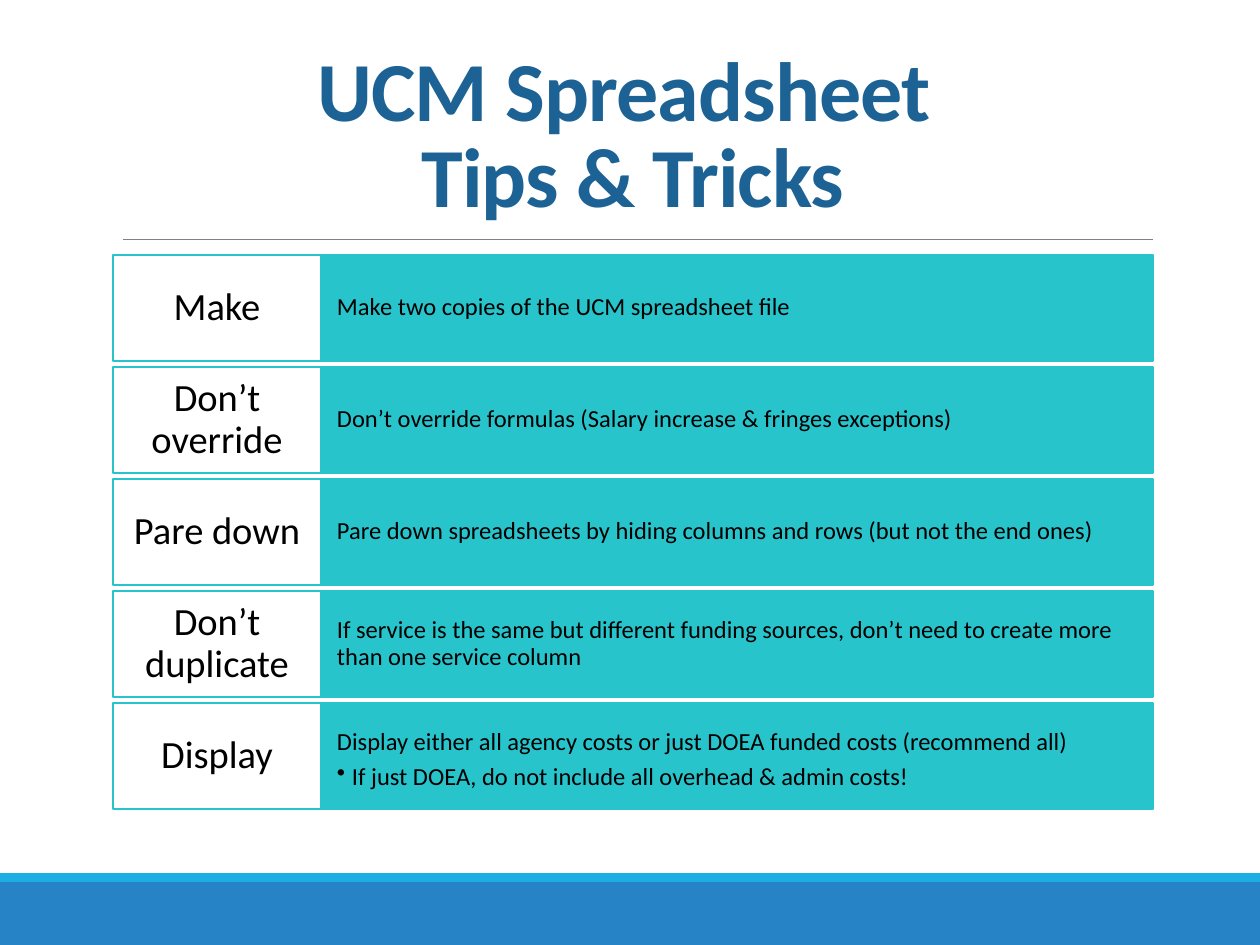
from lxml import etree
from pptx import Presentation
from pptx.dml.color import RGBColor
from pptx.enum.shapes import MSO_CONNECTOR, MSO_SHAPE
from pptx.enum.text import MSO_ANCHOR, MSO_AUTO_SIZE, PP_ALIGN
from pptx.oxml.ns import qn
from pptx.util import Pt

RECT = MSO_SHAPE.RECTANGLE
STRAIGHT = MSO_CONNECTOR.STRAIGHT
TOP, MIDDLE = MSO_ANCHOR.TOP, MSO_ANCHOR.MIDDLE
LEFT, CENTER = PP_ALIGN.LEFT, PP_ALIGN.CENTER
PX = 914400 / 126
COLORS = {
    "footer": "2683C6", "stripe": "1CADE4", "rule": "808080",
    "title": "1D6294", "teal": "28C4CC", "white": "FFFFFF", "text": "000000",
}
ROWS = [
    ("Make", ["Make two copies of the UCM spreadsheet file"]),
    ("Don’t override", ["Don’t override formulas (Salary increase & fringes exceptions)"]),
    ("Pare down", ["Pare down spreadsheets by hiding columns and rows (but not the end ones)"]),
    ("Don’t duplicate", ["If service is the same but different funding sources, "
                         "don’t need to create more than one service column"]),
    ("Display", ["Display either all agency costs or just DOEA funded costs (recommend all)",
                 "If just DOEA, do not include all overhead & admin costs!"]),
]
ROW_TOP, ROW_PITCH, ROW_HEIGHT = 255, 112, 106
LABEL = {"x": 113, "w": 208, "fill": "white", "size": 22, "align": CENTER,
         "after": 8, "inset_x": 11, "inset_y": 10}
BODY = {"x": 321, "w": 832, "fill": "teal", "size": 14, "align": LEFT,
        "after": 5, "inset_x": 16, "inset_y": 26}


def px(*lengths):
    return [round(n * PX) for n in lengths]


def add_box(x, y, w, h, fill, line=None):
    sp = s.shapes.add_shape(RECT, *px(x, y, w, h))
    sp.shadow.inherit = False
    sp.fill.solid()
    sp.fill.fore_color.rgb = RGBColor.from_string(COLORS[fill])
    if line:
        sp.line.color.rgb = RGBColor.from_string(COLORS[line])
        sp.line.width = Pt(1.25)
    else:
        sp.line.fill.background()
    return sp


prs = Presentation()
prs.slide_width, prs.slide_height = px(1260, 945)
s = prs.slides.add_slide(prs.slide_layouts[5])

add_box(0, 882, 1260, 63, "footer")
add_box(0, 873, 1260, 9, "stripe")

rule = s.shapes.add_connector(STRAIGHT, *px(123, 239, 1153, 239))
rule.line.color.rgb = RGBColor.from_string(COLORS["rule"])
rule.line.width = Pt(0.5)
etree.SubElement(rule._element.spPr, qn("a:effectLst"))

title = s.shapes.title
title.left, title.top, title.width, title.height = px(113, 39, 1040, 200)
tf = title.text_frame
tf.text = "UCM Spreadsheet \vTips & Tricks"
tf.auto_size = MSO_AUTO_SIZE.NONE
tf.vertical_anchor = MIDDLE
p = tf.paragraphs[0]
p.alignment = CENTER
p.line_spacing = 0.85
for r in p.runs:
    for name, value in {"name": "Calibri", "size": Pt(48), "bold": True}.items():
        setattr(r.font, name, value)
    r.font.color.rgb = RGBColor.from_string(COLORS["title"])
    r._r.get_or_add_rPr().set("spc", "-50")

for i, (label, lines) in enumerate(ROWS):
    for style, texts in ((BODY, lines), (LABEL, [label])):
        sp = add_box(style["x"], ROW_TOP + i * ROW_PITCH, style["w"], ROW_HEIGHT,
                     style["fill"], "teal")
        tf = sp.text_frame
        inset_x, inset_y = px(style["inset_x"], style["inset_y"])
        frame = {"word_wrap": True, "margin_left": inset_x, "margin_right": inset_x,
                 "margin_top": inset_y, "margin_bottom": inset_y,
                 "vertical_anchor": TOP if len(texts) > 1 else MIDDLE}
        for name, value in frame.items():
            setattr(tf, name, value)
        for n, text in enumerate(texts):
            p = tf.add_paragraph() if n else tf.paragraphs[0]
            p.alignment = style["align"]
            p.line_spacing = 0.9
            p.space_after = Pt(2 if n else style["after"])
            r = p.add_run()
            r.text = text
            r.font.name = "Calibri"
            r.font.size = Pt(style["size"])
            r.font.color.rgb = RGBColor.from_string(COLORS["text"])
            if n:
                p.level = 1
                pPr = p._p.get_or_add_pPr()
                indent = px(15)[0]
                pPr.set("marL", str(indent))
                pPr.set("indent", str(-indent))
                etree.SubElement(pPr, qn("a:buChar"), char="•")

prs.save("out.pptx")
